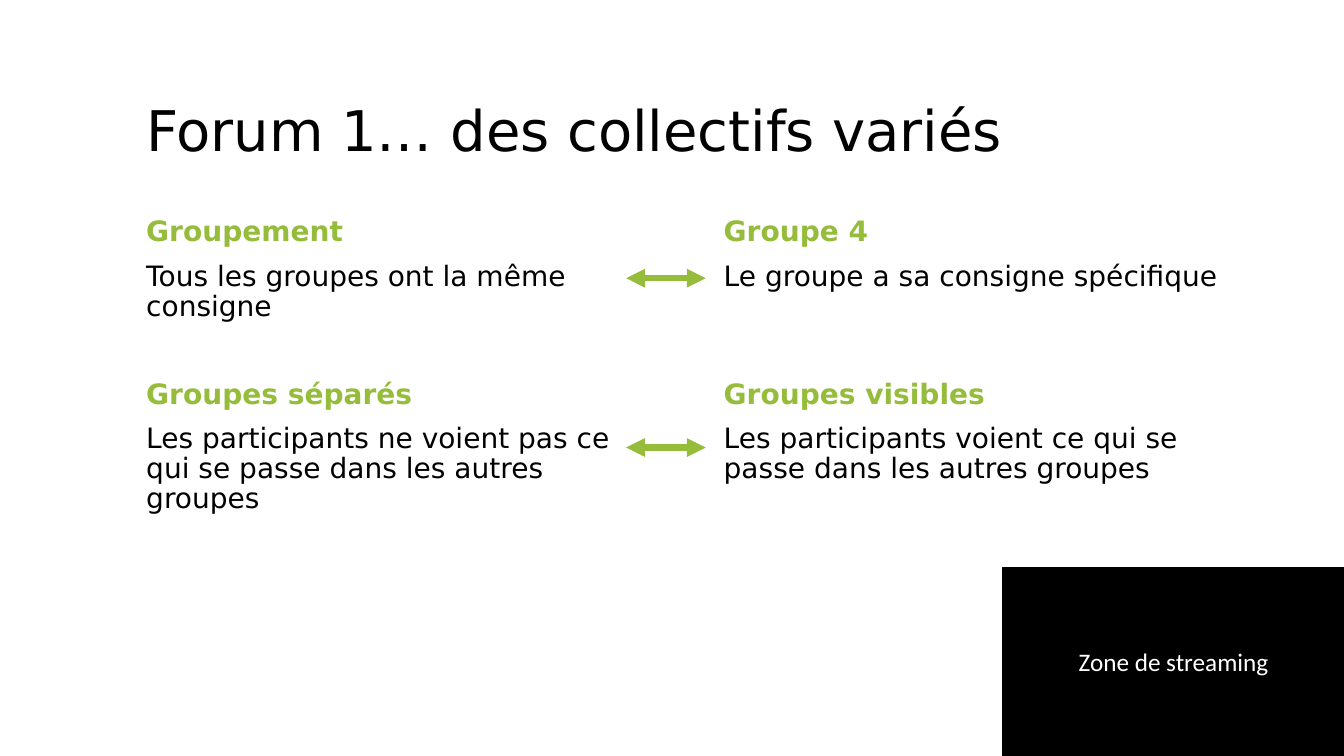
from dataclasses import dataclass

from lxml.etree import SubElement
from pptx import Presentation
from pptx.dml.color import RGBColor
from pptx.enum.shapes import MSO_CONNECTOR, MSO_SHAPE
from pptx.enum.text import MSO_ANCHOR as Anchor, MSO_AUTO_SIZE, PP_ALIGN as Align
from pptx.oxml.ns import qn
from pptx.shapes.base import BaseShape
from pptx.slide import Slide
from pptx.text.text import TextFrame
from pptx.util import Inches, Pt

SLIDE_WIDTH, SLIDE_HEIGHT = Inches(13.33), Inches(7.5)
GRID = 100


@dataclass(frozen=True)
class Theme:
    accent: RGBColor = RGBColor(0x95, 0xBC, 0x3B)
    black: RGBColor = RGBColor(0, 0, 0)
    white: RGBColor = RGBColor(255, 255, 255)
    text_font: str = "DejaVu Sans"
    label_font: str = "Calibri"
    title_size: float = 40
    body_size: float = 20
    label_size: float = 18
    arrow_width: float = 4.5
    line_spacing: float = 0.9
    paragraph_gap: float = 10
    group_gap: float = 41


@dataclass(frozen=True)
class Area:
    column: float
    row: float
    columns: float
    rows: float


@dataclass(frozen=True)
class Group:
    heading: str
    description: str


@dataclass(frozen=True)
class GroupBox:
    area: Area
    group: Group


THEME = Theme()
TITLE_AREA = Area(10.13, 12, 82.29, 11.33)
LEFT_AREA = Area(10.13, 28.13, 36.38, 66.27)
STREAMING_AREA = Area(74.64, 75.07, 25.36, 24.93)
LEFT_GROUPS = (
    Group("Groupement", "Tous les groupes ont la même consigne"),
    Group("Groupes séparés",
          "Les participants ne voient pas ce qui se passe dans les autres groupes"),
)
RIGHT_BOXES = (
    GroupBox(Area(53.11, 28.13, 38.86, 18.8),
             Group("Groupe 4", "Le groupe a sa consigne spécifique")),
    GroupBox(Area(53.11, 49.6, 38.86, 15.33),
             Group("Groupes visibles",
                   "Les participants voient ce qui se passe dans les autres groupes")),
)
ARROW_START, ARROW_END = 46.59, 52.51
ARROW_ROWS = (36.8, 59.2)


def across(columns: float) -> int:
    return round(SLIDE_WIDTH * columns / GRID)


def down(rows: float) -> int:
    return round(SLIDE_HEIGHT * rows / GRID)


def bounds(area: Area) -> tuple[int, int, int, int]:
    return across(area.column), down(area.row), across(area.columns), down(area.rows)


def place(shape: BaseShape, area: Area) -> None:
    shape.left, shape.top, shape.width, shape.height = bounds(area)


def prepare(frame: TextFrame, anchor: Anchor) -> None:
    frame.word_wrap = True
    frame.auto_size = MSO_AUTO_SIZE.NONE
    frame.vertical_anchor = anchor


def write(frame: TextFrame, text: str, *, size: float = THEME.body_size,
          color: RGBColor = THEME.black, bold: bool = False,
          font: str = THEME.text_font, align: Align = Align.LEFT,
          spacing: float = THEME.line_spacing, gap: float = 0) -> None:
    paragraph = frame.paragraphs[0] if not frame.text else frame.add_paragraph()
    properties = paragraph._p.get_or_add_pPr()
    properties.set("marL", "0")
    properties.set("indent", "0")
    SubElement(properties, qn("a:buNone"))
    paragraph.alignment = align
    paragraph.line_spacing = spacing
    paragraph.space_before = Pt(gap)
    run = paragraph.add_run()
    run.text = text
    run.font.name = font
    run.font.size = Pt(size)
    run.font.bold = bold
    run.font.color.rgb = color


def write_group(frame: TextFrame, group: Group, gap: float = 0) -> None:
    write(frame, group.heading, color=THEME.accent, bold=True, gap=gap)
    write(frame, group.description, gap=THEME.paragraph_gap)


def add_title(slide: Slide) -> None:
    title = slide.shapes.title
    place(title, TITLE_AREA)
    prepare(title.text_frame, Anchor.MIDDLE)
    write(title.text_frame, "Forum 1… des collectifs variés", size=THEME.title_size)


def add_left_groups(slide: Slide) -> None:
    body = slide.placeholders[1]
    place(body, LEFT_AREA)
    prepare(body.text_frame, Anchor.TOP)
    for index, group in enumerate(LEFT_GROUPS):
        write_group(body.text_frame, group, THEME.group_gap if index else 0)


def add_group_box(slide: Slide, box: GroupBox) -> None:
    frame = slide.shapes.add_textbox(*bounds(box.area)).text_frame
    prepare(frame, Anchor.TOP)
    write_group(frame, box.group)


def add_arrow(slide: Slide, row: float) -> None:
    arrow = slide.shapes.add_connector(
        MSO_CONNECTOR.STRAIGHT, across(ARROW_START), down(row), across(ARROW_END), down(row))
    arrow.line.color.rgb = THEME.accent
    arrow.line.width = Pt(THEME.arrow_width)
    line = arrow.line._get_or_add_ln()
    for end in ("a:headEnd", "a:tailEnd"):
        SubElement(line, qn(end), type="triangle")
    SubElement(arrow._element.spPr, qn("a:effectLst"))


def add_streaming_zone(slide: Slide) -> None:
    zone = slide.shapes.add_shape(MSO_SHAPE.RECTANGLE, *bounds(STREAMING_AREA))
    zone.shadow.inherit = False
    zone.fill.solid()
    zone.fill.fore_color.rgb = THEME.black
    zone.line.color.rgb = THEME.black
    zone.line.width = Pt(1)
    prepare(zone.text_frame, Anchor.MIDDLE)
    write(zone.text_frame, "Zone de streaming", size=THEME.label_size, color=THEME.white,
          font=THEME.label_font, align=Align.CENTER, spacing=1.0)


def main() -> None:
    presentation = Presentation()
    presentation.slide_width, presentation.slide_height = SLIDE_WIDTH, SLIDE_HEIGHT
    slide = presentation.slides.add_slide(presentation.slide_layouts[1])
    add_streaming_zone(slide)
    add_title(slide)
    add_left_groups(slide)
    for box in RIGHT_BOXES:
        add_group_box(slide, box)
    for row in ARROW_ROWS:
        add_arrow(slide, row)
    presentation.save("out.pptx")


if __name__ == "__main__":
    main()
